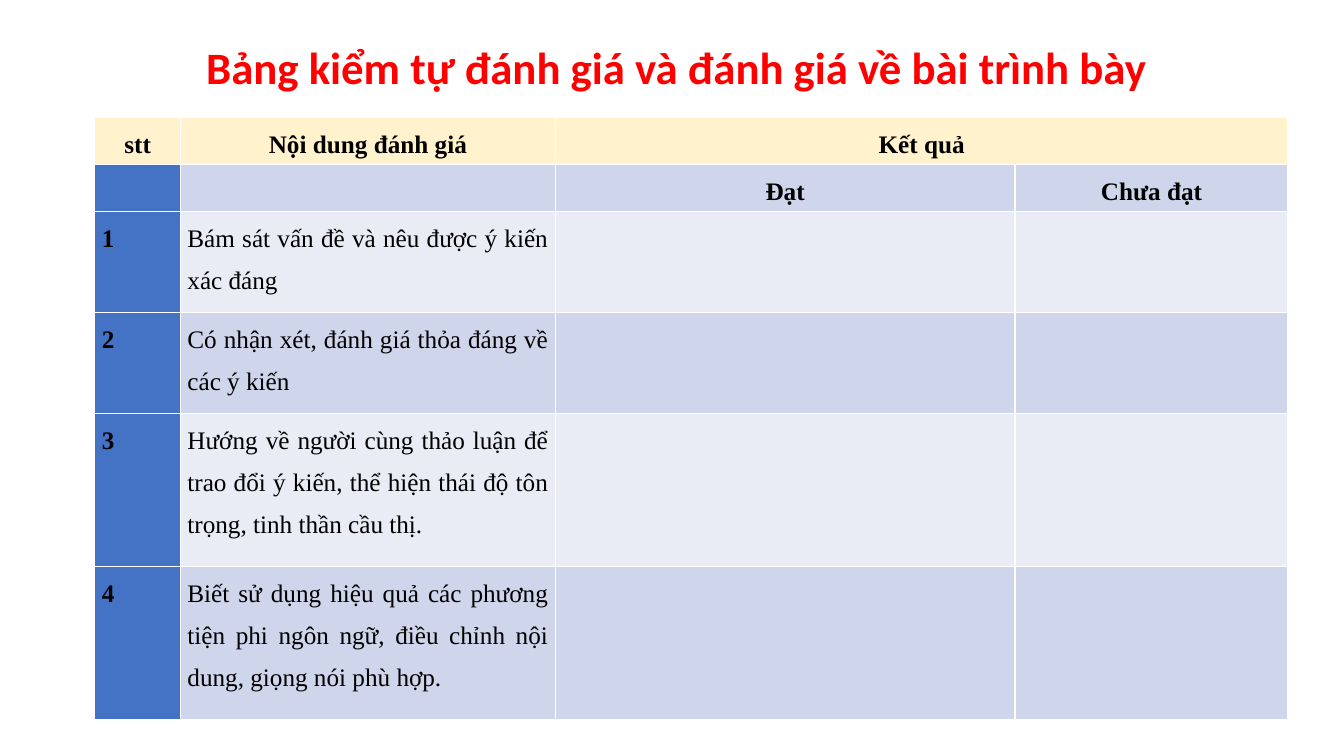
from pptx import Presentation
from pptx.dml.color import RGBColor
from pptx.enum.text import MSO_ANCHOR, PP_ALIGN
from pptx.util import Pt

TITLE = " Bảng kiểm tự đánh giá và đánh giá về bài trình bày"
HEADINGS = [
    ["stt", "Nội dung đánh giá", "Kết quả", ""],
    ["", "", "Đạt", "Chưa đạt"],
]
CRITERIA = [
    "Bám sát vấn đề và nêu được ý kiến xác đáng",
    "Có nhận xét, đánh giá thỏa đáng về các ý kiến",
    "Hướng về người cùng thảo luận để trao đổi ý kiến, thể hiện thái độ tôn trọng, tinh thần cầu thị.",
    "Biết sử dụng hiệu quả các phương tiện phi ngôn ngữ, điều chỉnh nội dung, giọng nói phù hợp.",
]
COLORS = {
    "title": "FF0000",
    "text": "000000",
    "header": "FFF2CC",
    "number": "4472C4",
    "dark_band": "CFD5EA",
    "light_band": "E9EBF5",
}
COLUMN_WIDTHS = [61.2, 267.8, 328.3, 195.1]
ROW_HEIGHTS = [33.8, 33.8, 72, 72, 109.4, 109.4]
CELL_FORMAT = {
    "margin_left": Pt(5),
    "margin_right": Pt(5),
    "margin_top": 0,
    "margin_bottom": 0,
    "vertical_anchor": MSO_ANCHOR.TOP,
}


def apply_format(target, values):
    for name, value in values.items():
        setattr(target, name, value)


def write(para, text, color, paragraph_format, font_format):
    apply_format(para, paragraph_format)
    span = para.add_run()
    span.text = text
    apply_format(span.font, font_format)
    span.font.color.rgb = RGBColor.from_string(COLORS[color])


def cell_color(row, column):
    if row == 0:
        return "header"
    if column == 0:
        return "number"
    return "dark_band" if row % 2 else "light_band"


def add_title(page):
    box = page.shapes.add_textbox(Pt(54), Pt(19.4), Pt(851.8), Pt(49))
    box.text_frame.word_wrap = True
    write(
        box.text_frame.paragraphs[0], TITLE, "title",
        {"alignment": PP_ALIGN.CENTER, "line_spacing": 1.15},
        {"name": "Calibri", "size": Pt(32), "bold": True},
    )


def add_checklist(page):
    rows = HEADINGS + [[str(number), text, "", ""] for number, text in enumerate(CRITERIA, 1)]
    table = page.shapes.add_table(
        len(rows), len(COLUMN_WIDTHS), Pt(67.7), Pt(83.5),
        Pt(sum(COLUMN_WIDTHS)), Pt(sum(ROW_HEIGHTS)),
    ).table
    table.first_col = True
    for column, width in zip(table.columns, COLUMN_WIDTHS):
        column.width = Pt(width)
    for row, height in zip(table.rows, ROW_HEIGHTS):
        row.height = Pt(height)
    table.cell(0, 2).merge(table.cell(0, 3))

    for row, texts in enumerate(rows):
        is_heading = row < len(HEADINGS)
        for column, text in enumerate(texts):
            cell = table.cell(row, column)
            cell.fill.solid()
            cell.fill.fore_color.rgb = RGBColor.from_string(COLORS[cell_color(row, column)])
            if not text:
                continue
            apply_format(cell, CELL_FORMAT)
            write(
                cell.text_frame.paragraphs[0], text, "text",
                {
                    "alignment": PP_ALIGN.CENTER if is_heading else PP_ALIGN.JUSTIFY,
                    "line_spacing": 1.5,
                    "space_after": Pt(8),
                },
                {"name": "Times New Roman", "size": Pt(18), "bold": is_heading or column == 0},
            )


def main():
    deck = Presentation()
    apply_format(deck, {"slide_width": Pt(960), "slide_height": Pt(540)})
    page = deck.slides.add_slide(deck.slide_layouts[6])
    add_title(page)
    add_checklist(page)
    deck.save("out.pptx")


if __name__ == "__main__":
    main()
